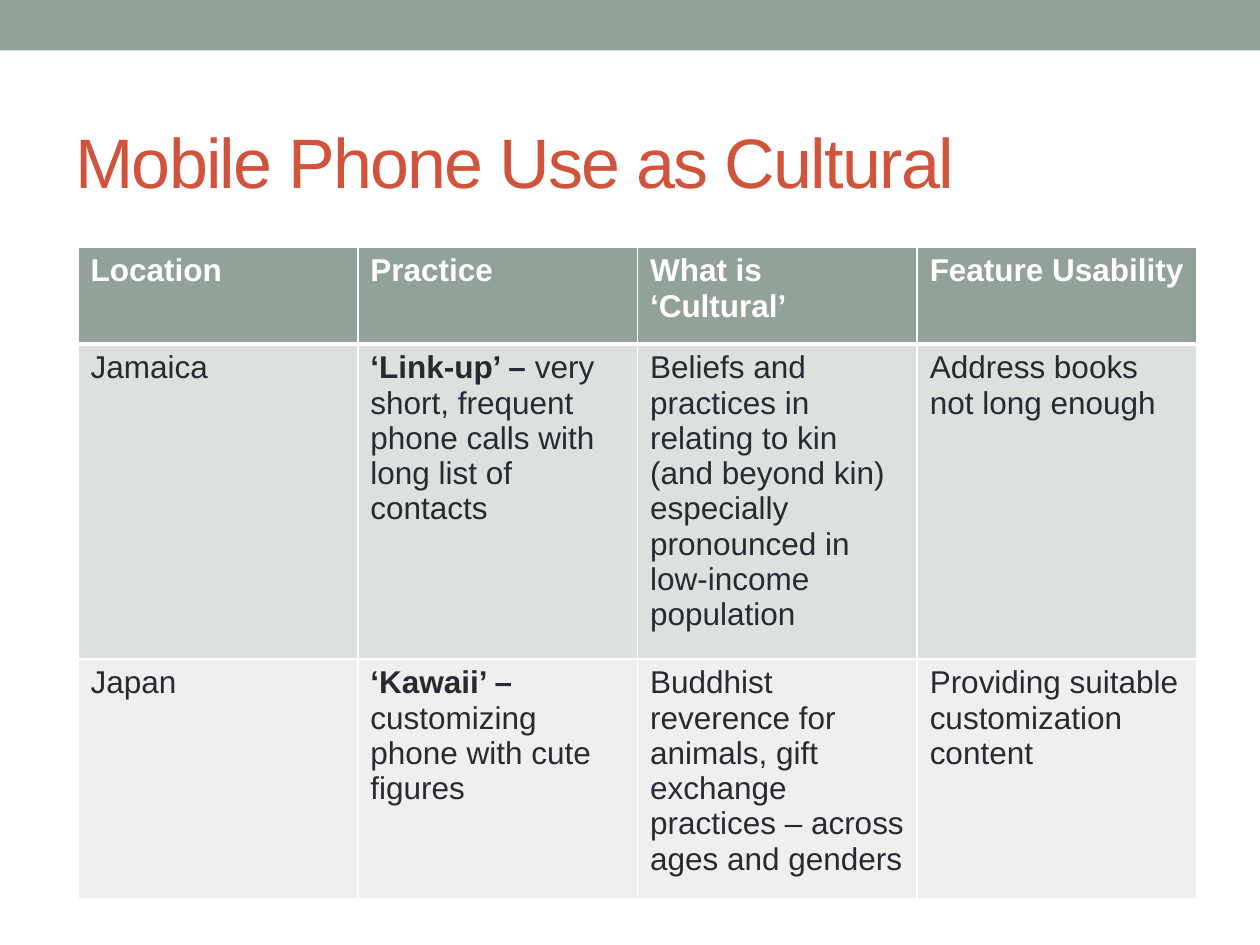
from dataclasses import dataclass

from lxml import etree
from pptx import Presentation
from pptx.dml.color import RGBColor
from pptx.enum.shapes import MSO_SHAPE
from pptx.enum.text import MSO_ANCHOR
from pptx.oxml.ns import qn
from pptx.util import Inches, Pt

RECTANGLE = MSO_SHAPE.RECTANGLE
MIDDLE = MSO_ANCHOR.MIDDLE

FONT = "Arial"
SAGE = "93A299"
WHITE = "FFFFFF"
INK = "292934"
RED = "D2533C"
COLUMN_WIDTH = 2.22


@dataclass(frozen=True)
class Cell:
    text: str
    lead: str = ""


@dataclass(frozen=True)
class RowStyle:
    height: float
    fill: str
    color: str = INK
    bold: bool = False
    top_border: float = 1
    bottom_border: float = 1


@dataclass(frozen=True)
class TableRow:
    style: RowStyle
    cells: tuple[Cell, ...]


TABLE_ROWS = (
    TableRow(
        RowStyle(0.77, SAGE, color=WHITE, bold=True, bottom_border=3),
        (
            Cell("Location"),
            Cell("Practice"),
            Cell("What is ‘Cultural’"),
            Cell("Feature Usability"),
        ),
    ),
    TableRow(
        RowStyle(2.33, "DCE0DE", top_border=3),
        (
            Cell("Jamaica"),
            Cell(
                "very short, frequent phone calls with long list of contacts",
                lead="‘Link-up’ – ",
            ),
            Cell(
                "Beliefs and practices in relating to kin (and beyond kin) "
                "especially pronounced in low-income population"
            ),
            Cell("Address books not long enough"),
        ),
    ),
    TableRow(
        RowStyle(1.78, "EEF0EF"),
        (
            Cell("Japan"),
            Cell("customizing phone with cute figures", lead="‘Kawaii’ – "),
            Cell(
                "Buddhist reverence for animals, gift exchange practices "
                "– across ages and genders"
            ),
            Cell("Providing suitable customization content"),
        ),
    ),
)


def rgb(value: str) -> RGBColor:
    return RGBColor.from_string(value)


def add_text(paragraph, text: str, *, size: float = 18, color: str = INK,
             bold: bool = False, spacing: float = 0) -> None:
    run = paragraph.add_run()
    run.text = text
    run.font.name = FONT
    run.font.size = Pt(size)
    run.font.bold = bold
    run.font.color.rgb = rgb(color)
    if spacing:
        run._r.get_or_add_rPr().set("spc", str(round(spacing * 100)))


def add_border(cell, side: str, width: float) -> None:
    properties = cell._tc.get_or_add_tcPr()
    line = etree.SubElement(properties, qn(f"a:ln{side}"), w=str(Pt(width)))
    fill = etree.SubElement(line, qn("a:solidFill"))
    etree.SubElement(fill, qn("a:srgbClr"), val=WHITE)


def draw_cell(cell, content: Cell, style: RowStyle) -> None:
    borders = {"L": 1, "R": 1, "T": style.top_border, "B": style.bottom_border}
    for side, width in borders.items():
        add_border(cell, side, width)
    cell.fill.solid()
    cell.fill.fore_color.rgb = rgb(style.fill)
    paragraph = cell.text_frame.paragraphs[0]
    if content.lead:
        add_text(paragraph, content.lead, color=style.color, bold=True)
    add_text(paragraph, content.text, color=style.color, bold=style.bold)


def draw_table(slide, rows: tuple[TableRow, ...]) -> None:
    column_count = len(rows[0].cells)
    table = slide.shapes.add_table(
        len(rows), column_count, Inches(0.62), Inches(1.96),
        Inches(COLUMN_WIDTH * column_count),
        Inches(sum(row.style.height for row in rows)),
    ).table
    for column in table.columns:
        column.width = Inches(COLUMN_WIDTH)
    for row_index, row in enumerate(rows):
        table.rows[row_index].height = Inches(row.style.height)
        for column_index, content in enumerate(row.cells):
            draw_cell(table.cell(row_index, column_index), content, row.style)


def draw_banner(slide) -> None:
    banner = slide.shapes.add_shape(RECTANGLE, 0, 0, Inches(10), Inches(0.4))
    banner.shadow.inherit = False
    banner.fill.solid()
    banner.fill.fore_color.rgb = rgb(SAGE)
    banner.line.fill.background()


def draw_title(slide, text: str) -> None:
    title = slide.shapes.add_textbox(
        Inches(0.5), Inches(0.58), Inches(9), Inches(1.38)
    )
    frame = title.text_frame
    frame.word_wrap = True
    frame.vertical_anchor = MIDDLE
    add_text(frame.paragraphs[0], text, size=40, color=RED, spacing=-1)


def main() -> None:
    presentation = Presentation()
    presentation.slide_width = Inches(10)
    presentation.slide_height = Inches(7.5)
    slide = presentation.slides.add_slide(presentation.slide_layouts[6])
    draw_banner(slide)
    draw_title(slide, "Mobile Phone Use as Cultural")
    draw_table(slide, TABLE_ROWS)
    presentation.save("out.pptx")


if __name__ == "__main__":
    main()
